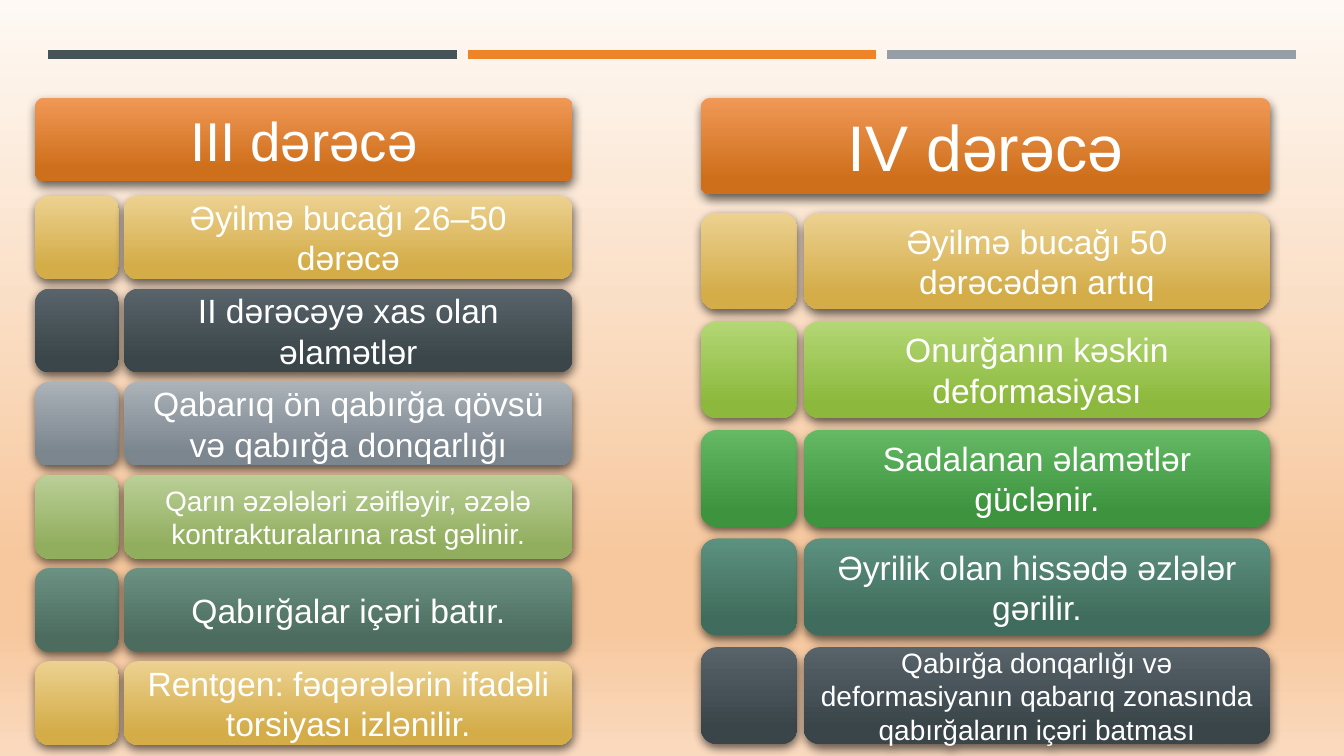
"""Build a slide that compares the signs of degrees III and IV in two columns of cards."""
from copy import deepcopy

from lxml import etree
from pptx import Presentation
from pptx.dml.color import RGBColor
from pptx.enum.shapes import MSO_CONNECTOR, MSO_SHAPE
from pptx.enum.text import MSO_ANCHOR, PP_ALIGN
from pptx.oxml.ns import qn
from pptx.util import Inches, Pt

ROUNDED = MSO_SHAPE.ROUNDED_RECTANGLE
STRAIGHT = MSO_CONNECTOR.STRAIGHT
MIDDLE = MSO_ANCHOR.MIDDLE
CENTER = PP_ALIGN.CENTER

BACKGROUND = [(0, "FEF9F4"), (0.74, "F7C89E"), (0.83, "F7C89E"), (1, "FADABF")]
RULES = ["465359", "ED8428", "969FA7"]
ORANGE = ("F09856", "CE6F1B")
GOLD = ("ECD190", "D4AD49")

COLUMNS = [
    {
        "left": 0.35, "width": 5.33, "side": 0.83, "text_left": 1.23,
        "first": 1.94, "last": 6.56, "heading": "III dərəcə", "heading_size": 39,
        "signs": [
            ("Əyilmə bucağı 26–50 dərəcə", 24, GOLD),
            ("II dərəcəyə xas olan əlamətlər", 24, ("58646A", "3B464B")),
            ("Qabarıq ön qabırğa qövsü və qabırğa donqarlığı", 24, ("ABB2B8", "7C868F")),
            ("Qarın əzələləri zəifləyir, əzələ kontrakturalarına rast gəlinir.", 20,
             ("BACF97", "91AE5E")),
            ("Qabırğalar içəri batır.", 24, ("6B9182", "4C6C5F")),
            ("Rentgen: fəqərələrin ifadəli torsiyası izlənilir.", 24, GOLD),
        ],
    },
    {
        "left": 6.95, "width": 5.65, "side": 0.96, "text_left": 7.97,
        "first": 2.11, "last": 6.42, "heading": "IV dərəcə", "heading_size": 46,
        "signs": [
            ("Əyilmə bucağı 50 dərəcədən artıq", 24, GOLD),
            ("Onurğanın kəskin deformasiyası", 24, ("B3D775", "8CB93D")),
            ("Sadalanan əlamətlər güclənir.", 24, ("65B965", "3D933E")),
            ("Əyrilik olan hissədə əzlələr gərilir.", 24, ("5D917F", "3F6C5C")),
            ("Qabırğa donqarlığı və deformasiyanın qabarıq zonasında "
             "qabırğaların içəri batması", 20, ("576369", "3A454A")),
        ],
    },
]


def color(hex_code):
    """Turn a hex string into a colour."""
    return RGBColor.from_string(hex_code)


def apply(target, values):
    """Set every attribute in the dict on the target."""
    for name, value in values.items():
        setattr(target, name, value)


class DegreeSlide:
    """Hold the style and the current slide."""

    font = {"name": "Arial"}
    ink = "FFFFFF"
    shadow = {"blurRad": Pt(7), "dist": Pt(3), "dir": 84 * 60000,
              "algn": "tl", "rotWithShape": 0}

    def __init__(self, slide):
        """Keep the slide to draw on."""
        self.slide = slide

    def gradient(self, fill, stops):
        """Run a fill from top to bottom through the given stops."""
        fill.gradient_angle = 270
        for stop, (position, hex_code) in zip(fill.gradient_stops, stops):
            stop.position = position
            stop.color.rgb = color(hex_code)

    def background(self, stops):
        """Paint the slide background."""
        fill = self.slide.background.fill
        fill.gradient()
        stop_list = self.slide.element.find(".//" + qn("a:gsLst"))
        while len(stop_list) < len(stops):
            stop_list.append(deepcopy(stop_list[0]))
        self.gradient(fill, stops)

    def rule(self, left, top, width, hex_code):
        """Draw a thick horizontal line."""
        line = self.slide.shapes.add_connector(
            STRAIGHT, Inches(left), Inches(top), Inches(left + width), Inches(top))
        line.line.color.rgb = color(hex_code)
        line.line.width = Pt(6.5)
        etree.SubElement(line.element.spPr, qn("a:effectLst"))

    def card(self, left, top, width, height, shades, corner=0.167):
        """Draw a shaded rounded card."""
        card = self.slide.shapes.add_shape(
            ROUNDED, Inches(left), Inches(top), Inches(width), Inches(height))
        card.adjustments[0] = corner
        card.fill.gradient()
        self.gradient(card.fill, zip((0, 0.84), shades))
        card.line.fill.background()
        card.shadow.inherit = False
        effects = card.element.spPr.find(qn("a:effectLst"))
        outer = etree.SubElement(effects, qn("a:outerShdw"),
                                 {key: str(value) for key, value in self.shadow.items()})
        black = etree.SubElement(outer, qn("a:srgbClr"), val="000000")
        etree.SubElement(black, qn("a:alpha"), val="60000")
        return card

    def label(self, card, text, size, margin):
        """Centre a text in a card."""
        frame = card.text_frame
        apply(frame, {"word_wrap": True, "vertical_anchor": MIDDLE,
                      "margin_left": Inches(margin), "margin_right": Inches(margin),
                      "margin_top": Inches(margin), "margin_bottom": Inches(margin)})
        paragraph = frame.paragraphs[0]
        paragraph.alignment = CENTER
        run = paragraph.add_run()
        run.text = text
        apply(run.font, {**self.font, "size": Pt(size)})
        run.font.color.rgb = color(self.ink)

    def column(self, left, width, side, text_left, first, last, heading, heading_size, signs):
        """Draw a heading and its evenly spaced rows of signs."""
        header = self.card(left, 0.97, width, side, ORANGE, corner=0.1)
        self.label(header, heading, heading_size, 0.05)
        pitch = (last - first) / (len(signs) - 1)
        for row, (sign, size, shades) in enumerate(signs):
            top = first + row * pitch
            self.card(left, top, side, side, shades)
            sign_card = self.card(text_left, top, left + width - text_left, side, shades)
            self.label(sign_card, sign, size, 0.15 if size == 24 else 0.12)


def main():
    """Create and save the presentation."""
    deck = Presentation()
    apply(deck, {"slide_width": Inches(13.33), "slide_height": Inches(7.5)})
    degrees = DegreeSlide(deck.slides.add_slide(deck.slide_layouts[6]))
    degrees.background(BACKGROUND)
    for index, hex_code in enumerate(RULES):
        degrees.rule(0.48 + index * 4.16, 0.54, 4.05, hex_code)
    for column in COLUMNS:
        degrees.column(**column)
    deck.save("out.pptx")


if __name__ == "__main__":
    main()
